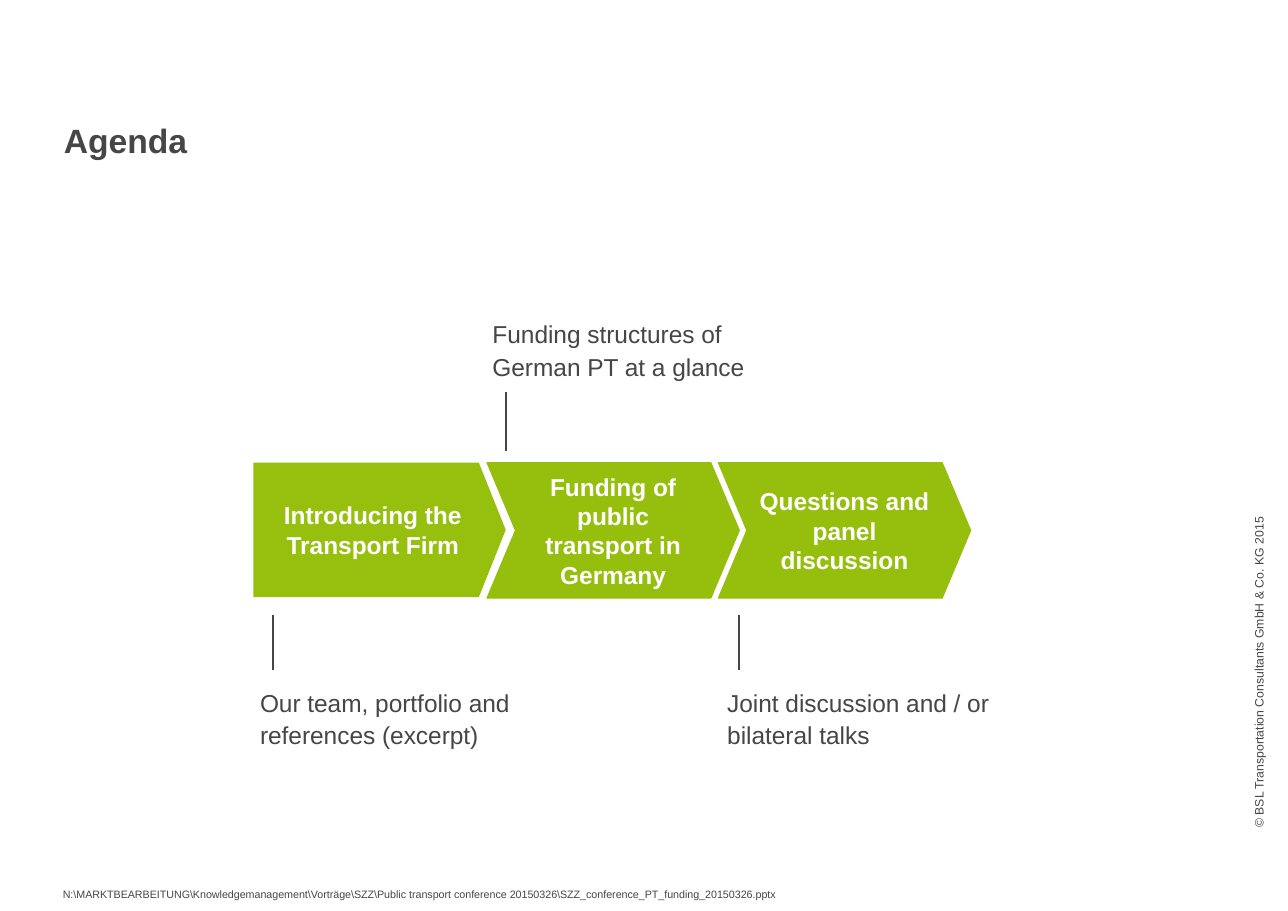
from dataclasses import dataclass

from lxml import etree
from pptx import Presentation, util as u
from pptx.dml.color import RGBColor
from pptx.enum import shapes, text
from pptx.oxml.ns import qn

PX = 9144


@dataclass(frozen=True)
class Theme:
    font: str = "Arial"
    ink: str = "464646"
    first_green: str = "97BF0D"
    green: str = "96BE0D"
    white: str = "FFFFFF"
    title: int = 22
    body: int = 16
    copyright: int = 8
    footer: int = 7


THEME = Theme()


@dataclass(frozen=True)
class Box:
    left: int
    top: int
    width: int
    height: int

    def emu(self) -> list[int]:
        return [v * PX for v in (self.left, self.top, self.width, self.height)]


@dataclass(frozen=True)
class Step:
    label: str
    arrow: Box
    outline: shapes.MSO_SHAPE
    notch: float
    fill: str
    border: bool
    detail: str
    detail_box: Box
    detail_anchor: text.MSO_ANCHOR
    tick_x: int
    tick_top: int
    tick_bottom: int


@dataclass(frozen=True)
class Caption:
    wording: str
    box: Box
    size: int
    margins: tuple[int, int]
    bold: bool = False
    wrap: bool = True
    anchor: text.MSO_ANCHOR = text.MSO_ANCHOR.TOP
    spacing: float = 1.1
    rotation: int = 0


CHEVRON, PENTAGON = shapes.MSO_SHAPE.CHEVRON, shapes.MSO_SHAPE.PENTAGON
TOP, MIDDLE, BOTTOM = text.MSO_ANCHOR.TOP, text.MSO_ANCHOR.MIDDLE, text.MSO_ANCHOR.BOTTOM

STEPS = [
    Step("Introducing the Transport Firm", Box(230, 420, 229, 122), PENTAGON, 0.2,
         THEME.first_green, False, "Our team, portfolio and references (excerpt)",
         Box(232, 618, 266, 126), TOP, 248, 558, 608),
    Step("Funding of public transport in Germany", Box(442, 420, 229, 123), CHEVRON, 0.21,
         THEME.green, True, "Funding structures of German PT at a glance",
         Box(443, 224, 276, 126), BOTTOM, 459, 356, 409),
    Step("Questions and panel discussion", Box(652, 420, 229, 123), CHEVRON, 0.21,
         THEME.green, True, "Joint discussion and / or bilateral talks",
         Box(656, 618, 252, 126), TOP, 671, 558, 608),
]

CAPTIONS = [
    Caption("© BSL Transportation Consultants GmbH & Co. KG 2015",
            Box(999, 601, 286, 15), THEME.copyright, (0, 0), wrap=False, rotation=270),
    Caption(r"N:\MARKTBEARBEITUNG\Knowledgemanagement\Vorträge\SZZ"
            r"\Public transport conference 20150326\SZZ_conference_PT_funding_20150326.pptx",
            Box(57, 800, 672, 24), THEME.footer, (0, 5), wrap=False),
    Caption("Agenda", Box(58, 43, 1054, 102), THEME.title, (0, 0),
            bold=True, anchor=BOTTOM, spacing=1.0),
]


def apply(target, values: dict) -> None:
    for name, value in values.items():
        setattr(target, name, value)


def write(frame, wording: str, size: int, color: str, bold: bool, align: text.PP_ALIGN,
          spacing: float, anchor: text.MSO_ANCHOR, margins: tuple[int, int], wrap: bool) -> None:
    side, edge = (m * PX for m in margins)
    apply(frame, {"word_wrap": wrap, "vertical_anchor": anchor,
                  "margin_left": side, "margin_right": side,
                  "margin_top": edge, "margin_bottom": edge})
    paragraph = frame.paragraphs[0]
    apply(paragraph, {"text": wording, "alignment": align, "line_spacing": spacing})
    font = paragraph.runs[0].font
    apply(font, {"name": THEME.font, "size": u.Pt(size), "bold": bold})
    font.color.rgb = RGBColor.from_string(color)


def draw_caption(slide, caption: Caption) -> None:
    area = slide.shapes.add_textbox(*caption.box.emu())
    area.rotation = caption.rotation
    write(area.text_frame, caption.wording, caption.size, THEME.ink, caption.bold,
          text.PP_ALIGN.LEFT, caption.spacing, caption.anchor, caption.margins, caption.wrap)


def draw_arrow(slide, step: Step) -> None:
    arrow = slide.shapes.add_shape(step.outline, *step.arrow.emu())
    arrow.shadow.inherit = False
    arrow.adjustments[0] = step.notch
    arrow.fill.solid()
    arrow.fill.fore_color.rgb = RGBColor.from_string(step.fill)
    if step.border:
        arrow.line.color.rgb = RGBColor.from_string(step.fill)
        arrow.line.width = u.Pt(0.75)
    else:
        arrow.line.fill.background()
    write(arrow.text_frame, step.label, THEME.body, THEME.white, True,
          text.PP_ALIGN.CENTER, 1.0, MIDDLE, (8, 4), True)


def draw_tick(slide, step: Step) -> None:
    x = step.tick_x * PX
    tick = slide.shapes.add_connector(shapes.MSO_CONNECTOR.STRAIGHT,
                                      x, step.tick_top * PX, x, step.tick_bottom * PX)
    tick.line.color.rgb = RGBColor.from_string(THEME.ink)
    tick.line.width = u.Pt(1.5)
    etree.SubElement(tick.element.spPr, qn("a:effectLst"))


def main() -> None:
    deck = Presentation()
    apply(deck, {"slide_width": 1169 * PX, "slide_height": 827 * PX})
    slide = deck.slides.add_slide(deck.slide_layouts[6])
    for caption in CAPTIONS:
        draw_caption(slide, caption)
    for step in STEPS:
        draw_arrow(slide, step)
        draw_tick(slide, step)
        draw_caption(slide, Caption(step.detail, step.detail_box, THEME.body, (4, 4),
                                    anchor=step.detail_anchor))
    deck.save("out.pptx")


if __name__ == "__main__":
    main()
